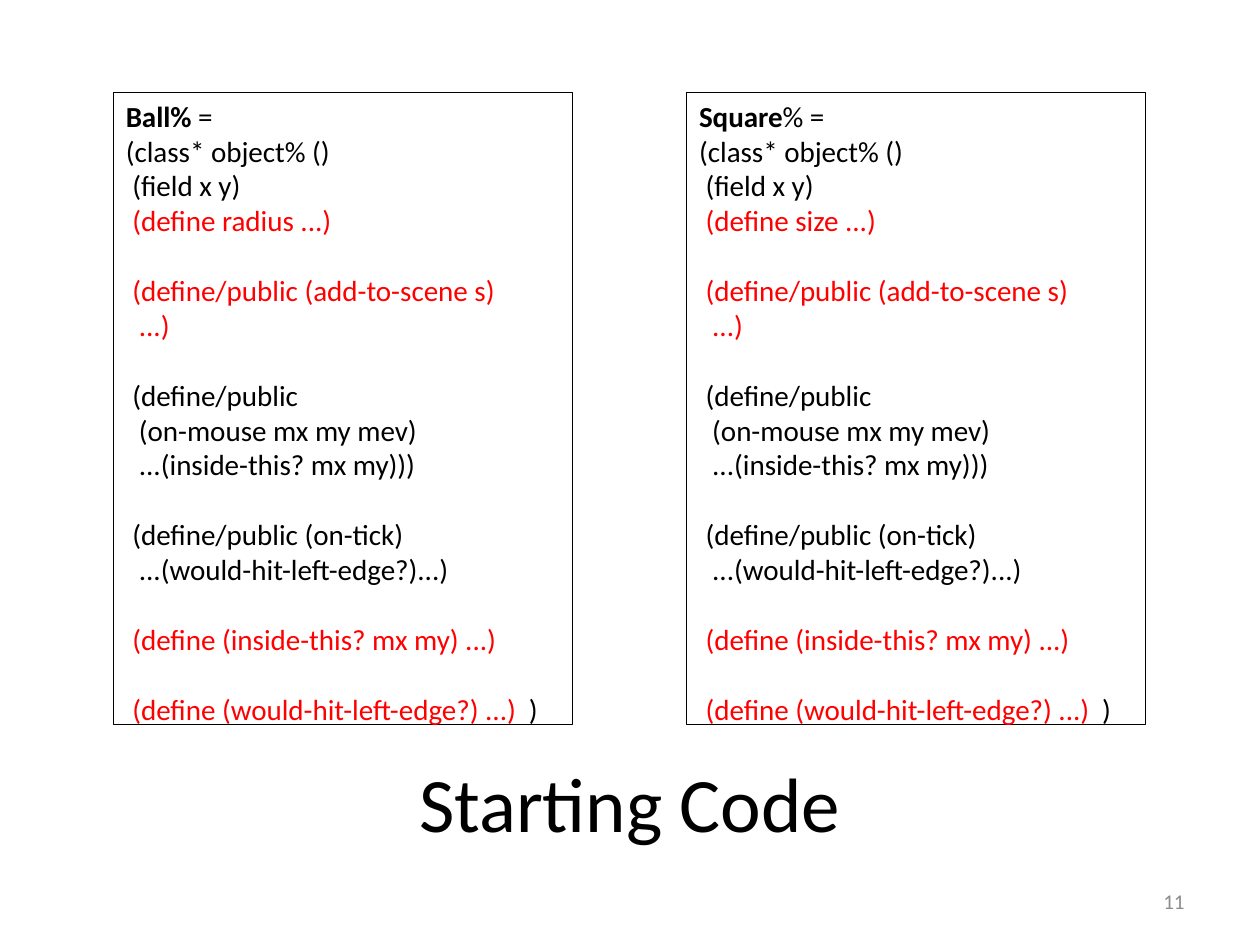
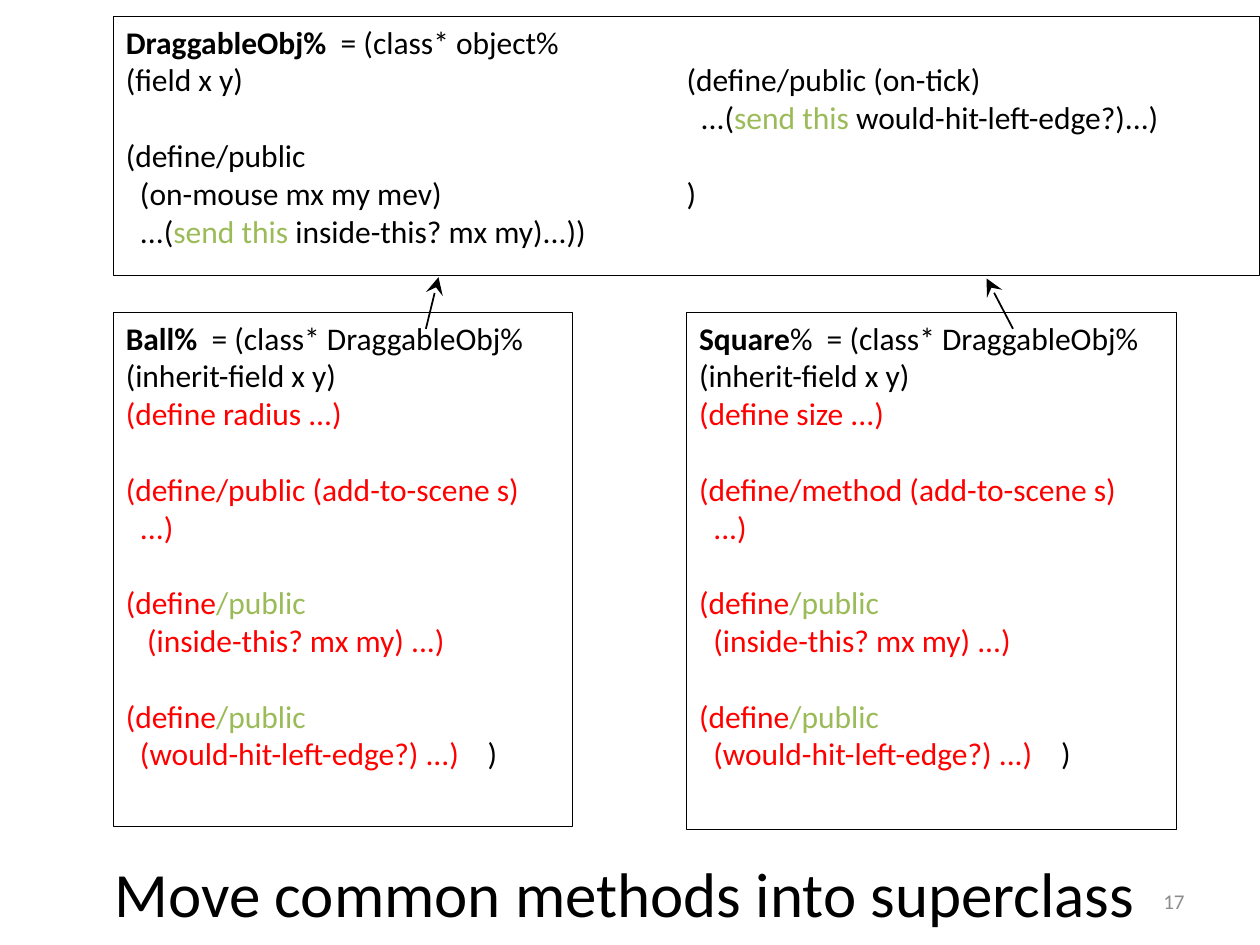
from lxml import etree
from pptx import Presentation
from pptx.dml.color import RGBColor
from pptx.enum.shapes import MSO_CONNECTOR as CONN, MSO_SHAPE as SHAPE
from pptx.enum.text import MSO_ANCHOR as ANCHOR, PP_ALIGN as ALIGN
from pptx.oxml.ns import qn
from pptx.util import Inches, Pt

COLORS = {"ink": "000000", "red": "FF0000", "green": "9BBB59", "gray": "8C8C8C"}
FONT = "Calibri"
SPACE_WIDTH = 0.226  # width of a space, in ems
LINE_PITCH = 1.2     # line height, in ems
LEFT, RIGHT = 0.9, 5.45  # left edges of the two code columns


def write(p, text, size=18, color="ink", bold=False, align=None, spacing=0):
    """Add a formatted run to a paragraph; spacing is extra points per letter."""
    r = p.add_run()
    r.text = text
    r.font.name, r.font.size, r.font.bold = FONT, Pt(size), bold
    r.font.color.rgb = RGBColor.from_string(COLORS[color])
    if spacing:
        r.font._element.set("spc", str(round(spacing * 100)))
    if align is not None:
        p.alignment = align


def code_box(s, box, lines, size, outline=True, close_gap=0):
    """Code listing; None opens a gap, leading spaces become an indent.

    A lone space is widened to close_gap spaces.
    """
    sp = s.shapes.add_shape(SHAPE.RECTANGLE, *map(Inches, box))
    sp.shadow.inherit = False
    sp.fill.background()
    if outline:
        sp.line.color.rgb = RGBColor.from_string(COLORS["ink"])
        sp.line.width = Pt(0.5)
    else:
        sp.line.fill.background()
    tf = sp.text_frame
    tf.word_wrap = True
    tf.vertical_anchor = ANCHOR.TOP
    p, gap = tf.paragraphs[0], False
    for line in lines:
        if line is None:
            gap = True
            continue
        if p.runs:
            p = tf.add_paragraph()
        p.alignment = ALIGN.LEFT
        p.line_spacing = Pt(size * LINE_PITCH)
        p.space_before = Pt(size * LINE_PITCH if gap else 0)
        gap = False
        first = line[0][0]
        indent = len(first) - len(first.lstrip(" "))
        pPr = p._p.get_or_add_pPr()
        pPr.set("marL", str(Pt(indent * SPACE_WIDTH * size)))
        pPr.set("indent", "0")
        for i, (text, style) in enumerate(line):
            bold = style == "bold"
            extra = (close_gap - 1) * SPACE_WIDTH * size if text == " " else 0
            write(p, text if i else text.lstrip(" "), size=size,
                  color="ink" if bold else style, bold=bold, spacing=extra)


prs = Presentation()
prs.slide_width, prs.slide_height = Inches(10), Inches(7.5)

# Titles and page numbers
slides = []
for title, box, size, align, number in [
    ("Starting Code", (0.5, 5.95, 9, 1.25), 44, ALIGN.CENTER, "11"),
    ("Move common methods into superclass", (0.81, 6.73, 8.37, 0.71), 36, ALIGN.LEFT, "17"),
]:
    s = prs.slides.add_slide(prs.slide_layouts[5])
    sp = s.shapes.title
    sp.left, sp.top, sp.width, sp.height = map(Inches, box)
    sp.text_frame.vertical_anchor = ANCHOR.TOP
    write(sp.text_frame.paragraphs[0], title, size=size, align=align)
    tf = s.shapes.add_textbox(*map(Inches, (7.17, 6.95, 2.33, 0.4))).text_frame
    tf.word_wrap = True
    tf.vertical_anchor = ANCHOR.MIDDLE
    write(tf.paragraphs[0], number, size=12, color="gray", align=ALIGN.RIGHT)
    slides.append(s)
start, move = slides

# Starting code: two classes that differ in name and one field
for left, name, rest, field in [
    (LEFT, "Ball%", " =", "radius"),
    (RIGHT, "Square", "% =", "size"),
]:
    code_box(start, (left, 0.73, 3.64, 5.02), [
        [(name, "bold"), (rest, "ink")],
        [("(class* object% ()", "ink")],
        [(" (field x y)", "ink")],
        [(f" (define {field} ...)", "red")],
        None,
        [(" (define/public (add-to-scene s)", "red")],
        [("  ...)", "red")],
        None,
        [(" (define/public", "ink")],
        [("  (on-mouse mx my mev)", "ink")],
        [("  ...(inside-this? mx my)))", "ink")],
        None,
        [(" (define/public (on-tick)", "ink")],
        [("  ...(would-hit-left-edge?)...)", "ink")],
        None,
        [(" (define (inside-this? mx my) ...)", "red")],
        None,
        [(" (define (would-hit-left-edge?) ...)", "red"), (" ", "red"), (")", "ink")],
    ], size=16.6, close_gap=2)

# Subclasses
for left, width, height, name, rest, field, keyword, pad in [
    (LEFT, 3.64, 4.08, "Ball%", "", "radius", "public", 3),
    (RIGHT, 3.89, 4.1, "Square", "%", "size", "method", 2),
]:
    define_public = [("(define", "red"), ("/public", "green")]
    code_box(move, (left, 2.48, width, height), [
        [(name, "bold"), (rest + "  = (class* DraggableObj%", "ink")],
        [("(inherit-field x y)", "ink")],
        [(f"(define {field} ...)", "red")],
        None,
        [(f"(define/{keyword} (add-to-scene s)", "red")],
        [("  ...)", "red")],
        None,
        define_public,
        [(" " * pad + "(inside-this? mx my) ...)", "red")],
        None,
        define_public,
        [("  (would-hit-left-edge?) ...)", "red"), (" ", "red"), (")", "ink")],
    ], size=18, close_gap=4)

# Superclass: outlined left column, then the right column one line lower
code_box(move, (LEFT, 0.13, 9.1, 2.06), [
    [("DraggableObj%", "bold"), ("  = (class* object%", "ink")],
    [("(field x y)", "ink")],
    None,
    [("(define/public", "ink")],
    [("  (on-mouse mx my mev)", "ink")],
    [("  ...(", "ink"), ("send this ", "green"), ("inside-this? mx my)...))", "ink")],
], size=18)
code_box(move, (5.35, 0.43, 4.65, 1.76), [
    [("(define/public (on-tick)", "ink")],
    [("  ...(", "ink"), ("send this ", "green"), ("would-hit-left-edge?)...)", "ink")],
    None,
    [(")", "ink")],
], size=18, outline=False)

# Inheritance arrows
for ends in [(3.38, 2.61, 3.48, 2.2), (8.04, 2.61, 7.83, 2.21)]:
    arrow = move.shapes.add_connector(CONN.STRAIGHT, *map(Inches, ends))
    arrow.line.color.rgb = RGBColor.from_string(COLORS["ink"])
    arrow.line.width = Pt(1)
    etree.SubElement(arrow.line._get_or_add_ln(), qn("a:tailEnd"),
                     type="stealth", w="lg", len="lg")
    etree.SubElement(arrow._element.spPr, qn("a:effectLst"))

prs.save("out.pptx")
